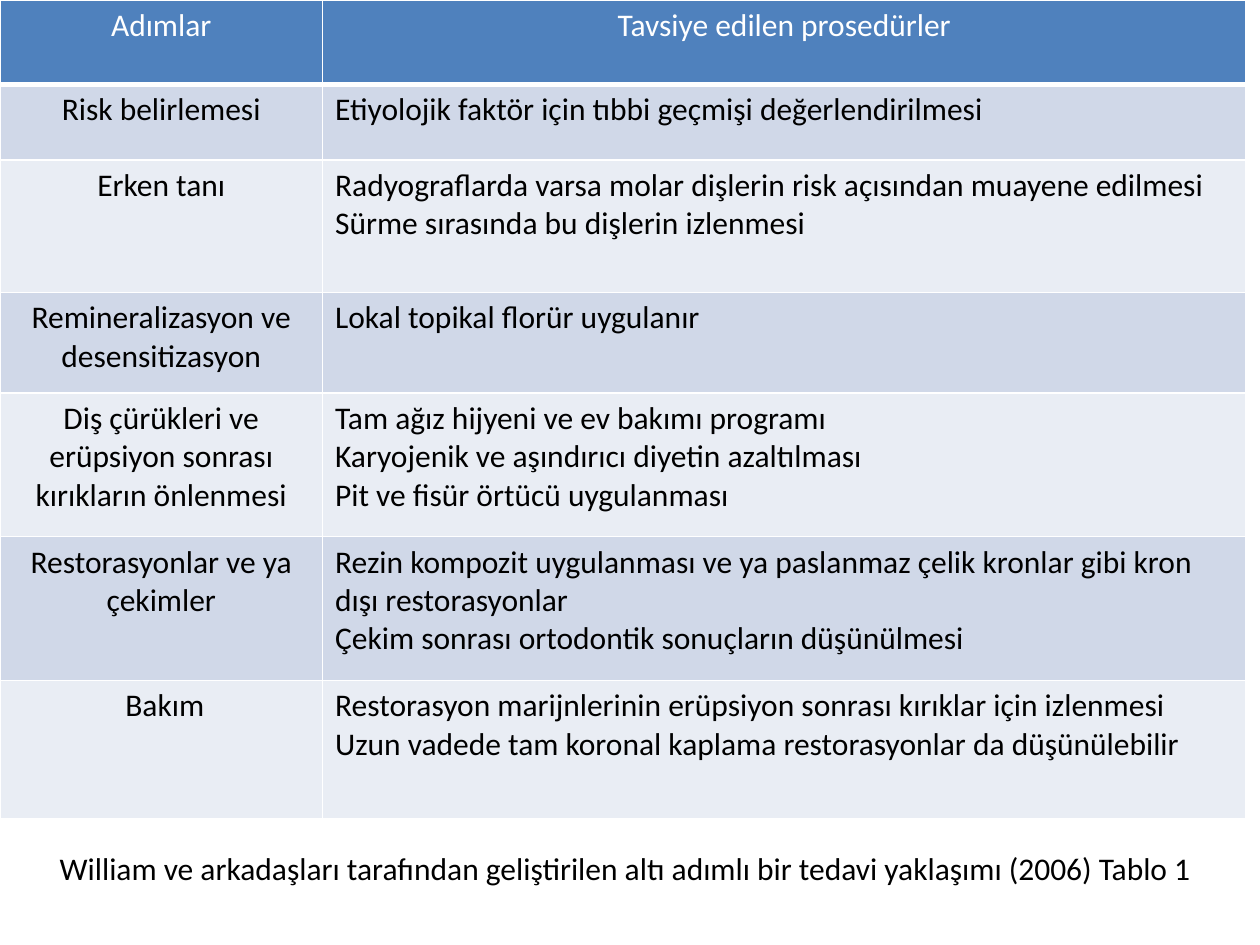
from dataclasses import dataclass

from lxml.etree import SubElement
from pptx import Presentation
from pptx.dml.color import RGBColor
from pptx.enum.text import MSO_AUTO_SIZE as AutoSize, PP_ALIGN as Align
from pptx.oxml.ns import qn
from pptx.slide import Slide
from pptx.table import _Cell as Cell
from pptx.text.text import TextFrame
from pptx.util import Inches, Pt

WHITE = RGBColor(0xFF, 0xFF, 0xFF)
BLACK = RGBColor(0x00, 0x00, 0x00)
HEADER_BLUE = RGBColor(0x4F, 0x81, 0xBD)
BAND_COLORS = (RGBColor(0xD0, 0xD8, 0xE8), RGBColor(0xE9, 0xED, 0xF4))
COLUMN_WIDTHS = (2.56, 7.33)


@dataclass(frozen=True)
class Step:
    height: float
    name: str
    procedures: tuple[str, ...]


HEADER = Step(0.67, "Adımlar", ("Tavsiye edilen prosedürler",))
STEPS = (
    Step(0.6, "Risk belirlemesi", ("Etiyolojik faktör için tıbbi geçmişi değerlendirilmesi",)),
    Step(1.05, "Erken tanı", (
        "Radyograflarda varsa molar dişlerin risk açısından muayene edilmesi",
        "Sürme sırasında bu dişlerin izlenmesi",
    )),
    Step(0.8, "Remineralizasyon ve desensitizasyon", ("Lokal topikal florür uygulanır",)),
    Step(1.14, "Diş çürükleri ve erüpsiyon sonrası kırıkların önlenmesi", (
        "Tam ağız hijyeni ve ev bakımı programı",
        "Karyojenik ve aşındırıcı diyetin azaltılması",
        "Pit ve fisür örtücü uygulanması",
    )),
    Step(1.14, "Restorasyonlar ve ya çekimler", (
        "Rezin kompozit uygulanması ve ya paslanmaz çelik kronlar gibi kron dışı restorasyonlar",
        "Çekim sonrası ortodontik sonuçların düşünülmesi",
    )),
    Step(1.1, " Bakım", (
        "Restorasyon marijnlerinin erüpsiyon sonrası kırıklar için izlenmesi",
        "Uzun vadede tam koronal kaplama restorasyonlar da düşünülebilir",
    )),
)
CAPTION = "William ve arkadaşları tarafından geliştirilen altı adımlı bir tedavi yaklaşımı (2006) Tablo 1"


def write_lines(frame: TextFrame, lines: tuple[str, ...], color: RGBColor, align: Align) -> None:
    for index, line in enumerate(lines):
        paragraph = frame.add_paragraph() if index else frame.paragraphs[0]
        paragraph.alignment = align
        run = paragraph.add_run()
        run.text = line
        run.font.name = "Calibri"
        run.font.size = Pt(18)
        run.font.color.rgb = color


def set_borders(cell: Cell, top: float, bottom: float) -> None:
    properties = cell._tc.get_or_add_tcPr()
    widths = {"a:lnL": 1, "a:lnR": 1, "a:lnT": top, "a:lnB": bottom}
    for tag, width in widths.items():
        line = SubElement(properties, qn(tag), w=str(Pt(width)))
        fill = SubElement(line, qn("a:solidFill"))
        SubElement(fill, qn("a:srgbClr"), val=str(WHITE))


def add_step_table(slide: Slide) -> None:
    rows = (HEADER, *STEPS)
    height = sum(step.height for step in rows)
    table = slide.shapes.add_table(
        len(rows), len(COLUMN_WIDTHS), 0, 0, Inches(sum(COLUMN_WIDTHS)), Inches(height)
    ).table
    for column, width in zip(table.columns, COLUMN_WIDTHS):
        column.width = Inches(width)
    for index, step in enumerate(rows):
        is_header = index == 0
        table.rows[index].height = Inches(step.height)
        for column, lines in enumerate(((step.name,), step.procedures)):
            cell = table.cell(index, column)
            set_borders(cell, top=3 if index == 1 else 1, bottom=3 if is_header else 1)
            cell.fill.solid()
            cell.fill.fore_color.rgb = HEADER_BLUE if is_header else BAND_COLORS[(index - 1) % 2]
            align = Align.CENTER if is_header or column == 0 else Align.LEFT
            write_lines(cell.text_frame, lines, WHITE if is_header else BLACK, align)


def add_caption(slide: Slide) -> None:
    box = slide.shapes.add_textbox(Inches(0.2), Inches(6.69), Inches(9.53), Inches(0.71))
    frame = box.text_frame
    frame.word_wrap = True
    frame.auto_size = AutoSize.SHAPE_TO_FIT_TEXT
    write_lines(frame, (CAPTION,), BLACK, Align.CENTER)


def main() -> None:
    """Build the slide with the six-step treatment table."""
    presentation = Presentation()
    presentation.slide_width = Inches(10)
    presentation.slide_height = Inches(7.5)
    slide = presentation.slides.add_slide(presentation.slide_layouts[6])
    add_step_table(slide)
    add_caption(slide)
    presentation.save("out.pptx")


if __name__ == "__main__":
    main()
